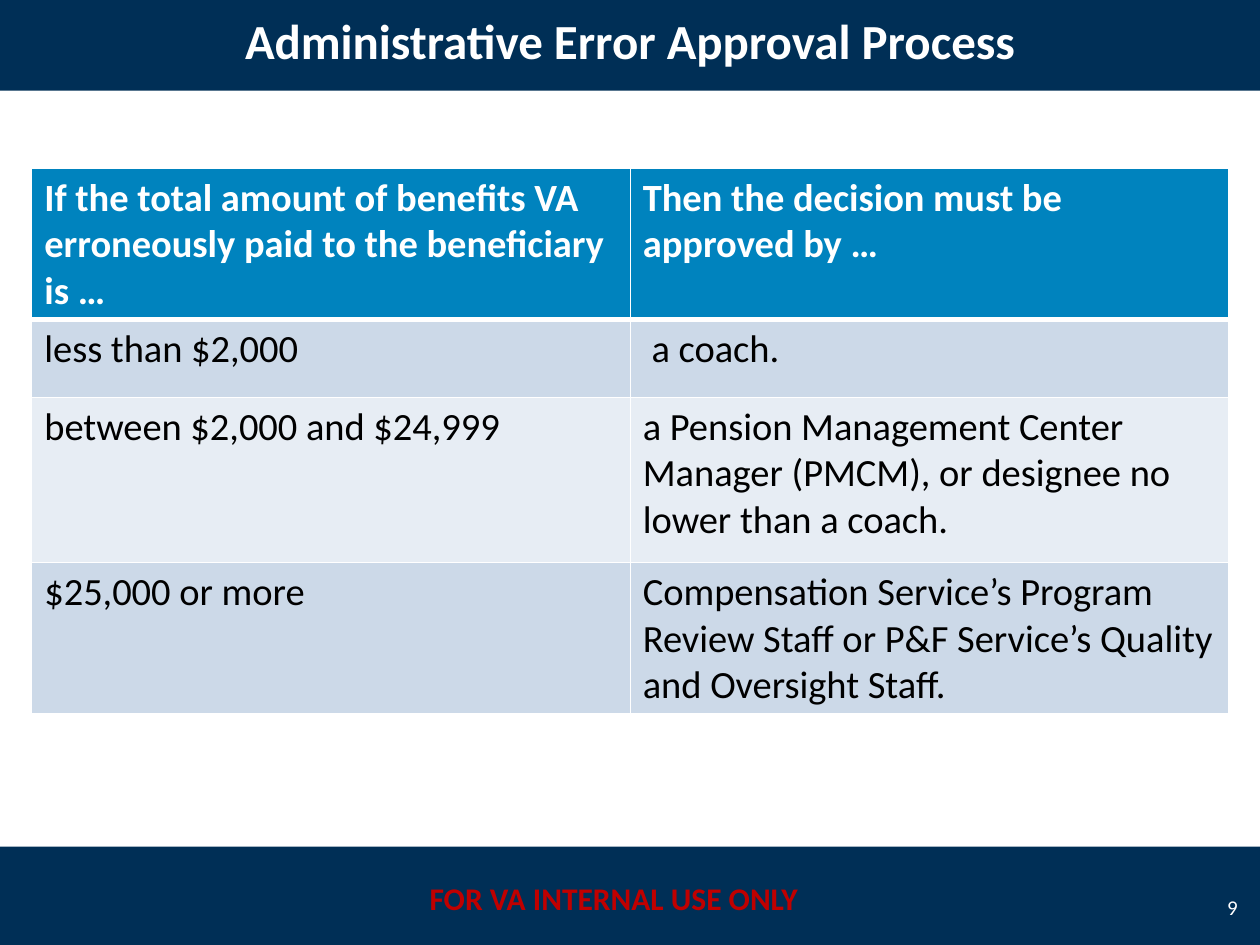
from lxml.etree import SubElement
from pptx import Presentation
from pptx.dml.color import RGBColor
from pptx.enum.shapes import MSO_SHAPE
from pptx.enum.text import MSO_ANCHOR, PP_ALIGN
from pptx.oxml.ns import qn
from pptx.util import Cm, Pt

COLORS = {
    "navy": "002F56", "header": "0083BE", "band": "CCD9E8", "light": "E7EDF4",
    "white": "FFFFFF", "black": "000000", "red": "C00000",
}
PAGE_WIDTH, PAGE_HEIGHT = 25.4, 19.05
BAR_HEIGHT = 2.03
TITLE_TOP, FOOTER_TOP = -0.2, 17.07

ROWS = [
    ("If the total amount of benefits VA erroneously paid to the beneficiary is …",
     "Then the decision must be approved by …"),
    ("less than $2,000", " a coach."),
    ("between $2,000 and $24,999",
     "a Pension Management Center Manager (PMCM), or designee no lower than a coach."),
    ("$25,000 or more",
     "Compensation Service’s Program Review Staff or P&F Service’s Quality "
     "and Oversight Staff."),
]
ROW_HEIGHTS = [2.87, 1.57, 3.33, 3.02]


class SlideBuilder:
    """Holds the text style and the slide being built."""

    def __init__(self, page, font_name="Calibri"):
        self.page = page
        self.font_name = font_name

    def color(self, name):
        return RGBColor.from_string(COLORS[name])

    def fill(self, target, name):
        target.fill.solid()
        target.fill.fore_color.rgb = self.color(name)

    def add_span(self, frame, text, color, size, bold=False, align=PP_ALIGN.LEFT):
        paragraph = frame.paragraphs[0]
        paragraph.alignment = align
        span = paragraph.add_run()
        span.text = text
        style = {"name": self.font_name, "size": Pt(size), "bold": bold}
        for attribute, value in style.items():
            setattr(span.font, attribute, value)
        span.font.color.rgb = self.color(color)

    def bar(self, top):
        shape = self.page.shapes.add_shape(
            MSO_SHAPE.RECTANGLE, 0, Cm(top), Cm(PAGE_WIDTH), Cm(BAR_HEIGHT))
        shape.shadow.inherit = False
        self.fill(shape, "navy")
        shape.line.fill.background()

    def text(self, place, text, anchor=MSO_ANCHOR.MIDDLE, **style):
        box = self.page.shapes.add_textbox(*map(Cm, place))
        box.text_frame.word_wrap = True
        box.text_frame.vertical_anchor = anchor
        self.add_span(box.text_frame, text, **style)

    def borders(self, cell, top, bottom):
        """Draw white cell edges; top and bottom are widths in points."""
        properties = cell._tc.get_or_add_tcPr()
        for edge, width in {"L": 1, "R": 1, "T": top, "B": bottom}.items():
            line = SubElement(properties, qn(f"a:ln{edge}"), w=str(Pt(width)))
            solid = SubElement(line, qn("a:solidFill"))
            SubElement(solid, qn("a:srgbClr"), val=COLORS["white"])

    def table(self, left, top, width, heights, rows):
        columns = len(rows[0])
        table = self.page.shapes.add_table(
            len(rows), columns, Cm(left), Cm(top), Cm(width), Cm(sum(heights))).table
        for column in table.columns:
            column.width = Cm(width / columns)
        for index, (height, texts) in enumerate(zip(heights, rows)):
            table.rows[index].height = Cm(height)
            is_header = index == 0
            background = "header" if is_header else ("light", "band")[index % 2]
            for cell, text in zip(table.rows[index].cells, texts):
                self.borders(cell, top=3 if index == 1 else 1, bottom=3 if is_header else 1)
                self.fill(cell, background)
                self.add_span(cell.text_frame, text, "white" if is_header else "black",
                              22, bold=is_header)


def main():
    deck = Presentation()
    deck.slide_width, deck.slide_height = Cm(PAGE_WIDTH), Cm(PAGE_HEIGHT)
    builder = SlideBuilder(deck.slides.add_slide(deck.slide_layouts[6]))

    for top in (FOOTER_TOP, TITLE_TOP):
        builder.bar(top)
    builder.text((8.25, 17.6, 8.25, 1.02), "FOR VA INTERNAL USE ONLY", MSO_ANCHOR.TOP,
                 color="red", size=18, bold=True, align=PP_ALIGN.CENTER)
    builder.text((24.13, 17.78, 1.07, 1.02), "9",
                 color="white", size=12, align=PP_ALIGN.RIGHT)
    builder.text((0, TITLE_TOP, PAGE_WIDTH, BAR_HEIGHT),
                 "Administrative Error Approval Process",
                 color="white", size=28, bold=True, align=PP_ALIGN.CENTER)
    builder.table(0.64, 3.39, 24.13, ROW_HEIGHTS, ROWS)

    deck.save("out.pptx")


if __name__ == "__main__":
    main()
